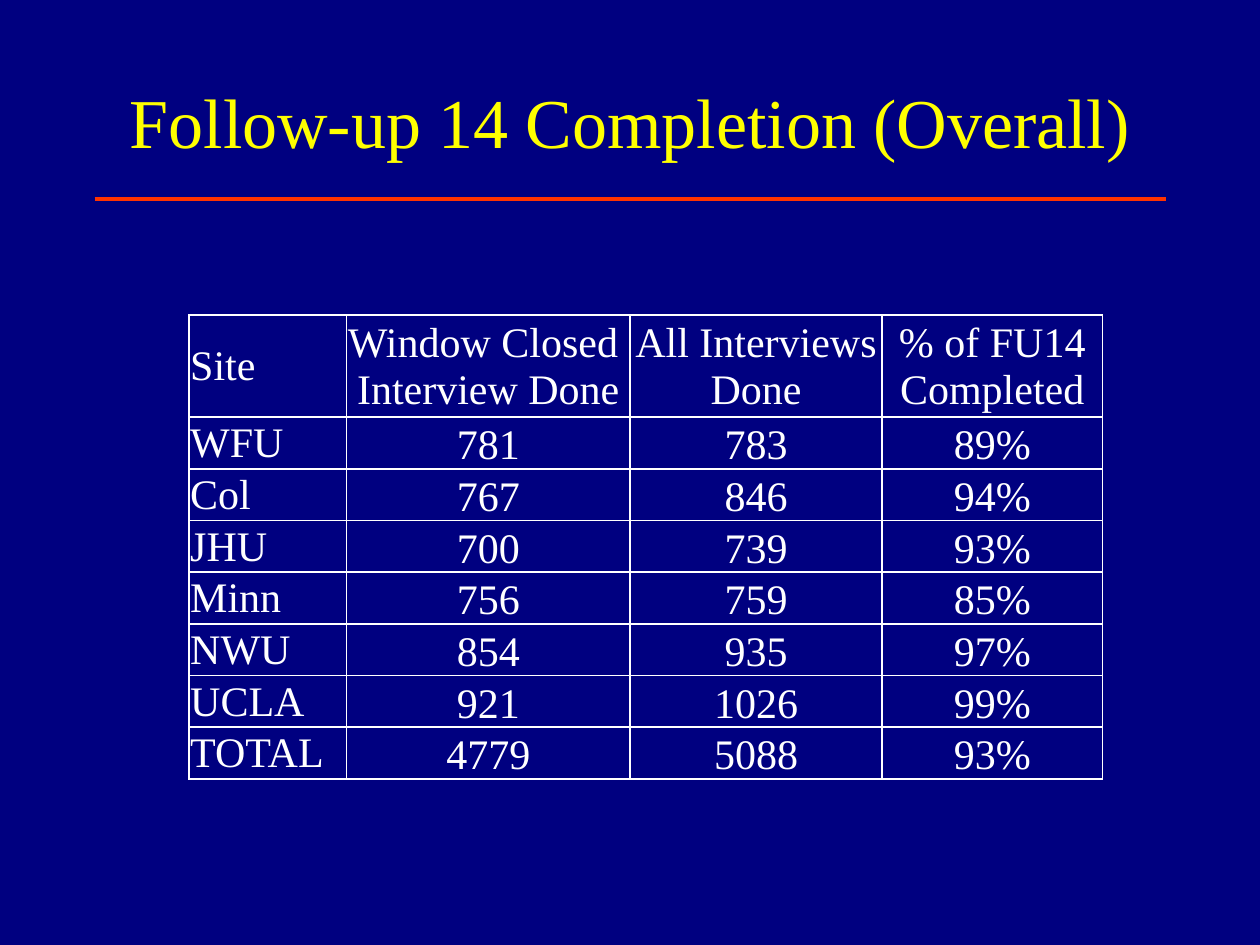
from lxml.etree import SubElement as Sub
from pptx import Presentation
from pptx.dml.color import RGBColor
from pptx.enum.shapes import MSO_CONNECTOR as Link
from pptx.enum.text import MSO_ANCHOR as Anchor, PP_ALIGN as Align
from pptx.oxml import parse_xml
from pptx.oxml.ns import nsdecls, qn
from pptx.util import Inches, Pt


def paint(hue):
    return RGBColor.from_string(hue)


def style(para, size, hue, align):
    para.alignment = align
    for run in para.runs:
        run.font.name = "Times New Roman"
        run.font.size = Pt(size)
        run.font.color.rgb = paint(hue)


deck = Presentation()
deck.slide_width, deck.slide_height = Inches(10), Inches(7.5)
slide = deck.slides.add_slide(deck.slide_layouts[6])
slide.background.fill.solid()
slide.background.fill.fore_color.rgb = paint("000080")

left, right, base = Inches(0.75), Inches(9.25), Inches(1.58)
rule = slide.shapes.add_connector(Link.STRAIGHT, left, base, right, base)
rule.line.color.rgb = paint("FF3300")
rule.line.width = Pt(2)
Sub(rule.element.spPr, qn("a:effectLst"))

top = Inches(0.33)
title = slide.shapes.add_textbox(left, top, right - left, base - top)
frame = title.text_frame
frame.word_wrap = True
frame.vertical_anchor = Anchor.MIDDLE
frame.text = "Follow-up 14 Completion (Overall)"
style(frame.paragraphs[0], 40, "FFFF00", Align.CENTER)

data = [
    ("Site", "Window Closed  Interview Done", "All Interviews Done", "% of FU14 Completed"),
    ("WFU", "781", "783", "89%"),
    ("Col", "767", "846", "94%"),
    ("JHU", "700", "739", "93%"),
    ("Minn", "756", "759", "85%"),
    ("NWU", "854", "935", "97%"),
    ("UCLA", "921", "1026", "99%"),
    ("TOTAL", "4779", "5088", "93%"),
]
wide = [1.25, 2.25, 2, 1.75]
full, head = 3.59, 0.75
tall = [head] + [(full - head) / 7] * 7

grid = slide.shapes.add_table(
    len(data), len(wide), Inches(1.5), Inches(2.5), Inches(sum(wide)), Inches(full)
).table
for col, width in zip(grid.columns, wide):
    col.width = Inches(width)
for row, height in zip(grid.rows, tall):
    row.height = Inches(height)

for r, line in enumerate(data):
    for c, text in enumerate(line):
        cell = grid.cell(r, c)
        cell.text_frame.text = text
        cell.margin_left = cell.margin_right = cell.margin_top = Inches(0.01)
        cell.margin_bottom = 0
        cell.vertical_anchor = Anchor.BOTTOM if r and c else Anchor.MIDDLE
        style(cell.text_frame.paragraphs[0], 24, "FFFFFF", Align.CENTER if c else Align.LEFT)
        cell.fill.background()
        props = cell._tc.get_or_add_tcPr()
        for i, side in enumerate("LRTB"):
            props.insert(i, parse_xml(
                f'<a:ln{side} {nsdecls("a")} w="{Pt(1)}"><a:solidFill>'
                f'<a:srgbClr val="FFFFFF"/></a:solidFill></a:ln{side}>'
            ))

deck.save("out.pptx")
